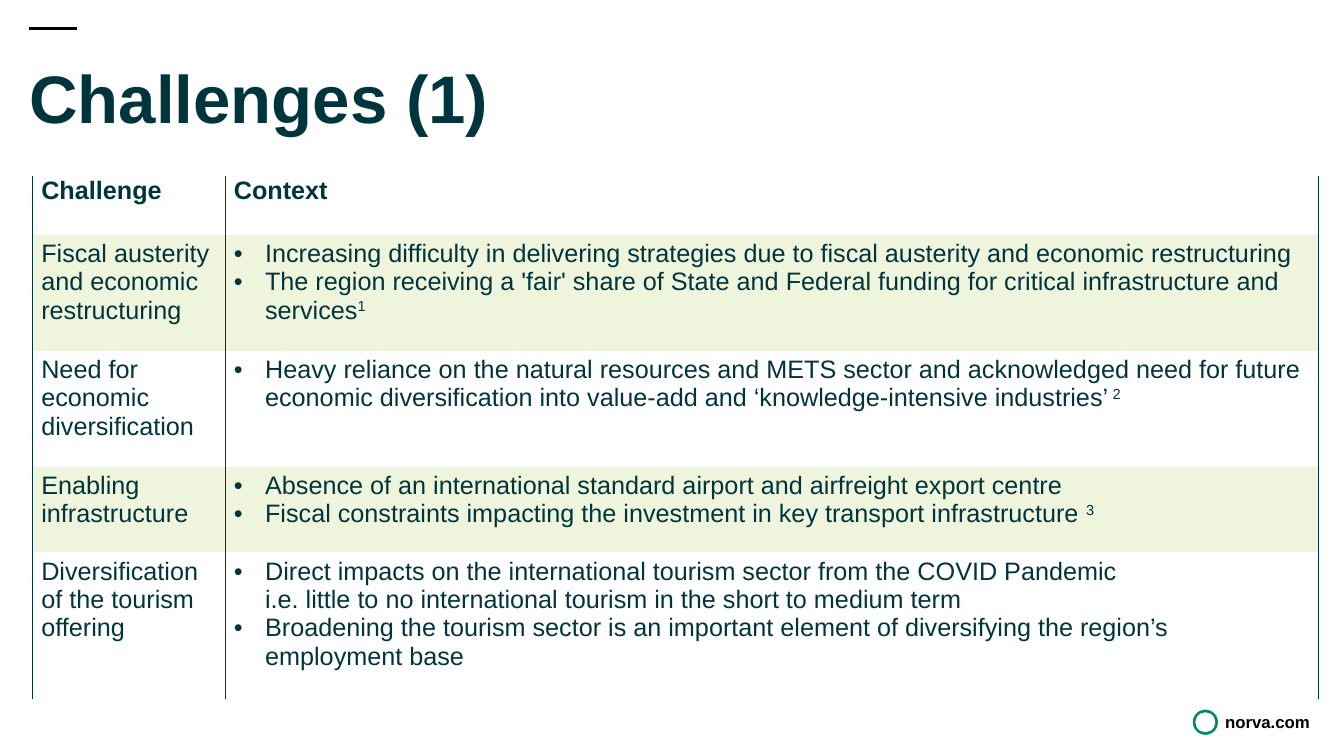
from lxml import etree
from pptx import Presentation
from pptx.dml.color import RGBColor
from pptx.enum.shapes import MSO_CONNECTOR, MSO_SHAPE
from pptx.enum.text import MSO_ANCHOR
from pptx.oxml.ns import qn
from pptx.util import Inches, Pt

STRAIGHT = MSO_CONNECTOR.STRAIGHT
RING = MSO_SHAPE.DONUT
TOP, MIDDLE = MSO_ANCHOR.TOP, MSO_ANCHOR.MIDDLE
TEAL = RGBColor(0x00, 0x35, 0x3E)
GREEN = RGBColor(0x00, 0x89, 0x66)
BAND = RGBColor(0xEF, 0xF5, 0xDD)
BLACK = RGBColor(0, 0, 0)
FONT = "Arial"

# Content: "^" starts a superscript reference, "\v" breaks a line
TITLE = "Challenges (1)"
FOOTER = "norva.com"
HEADINGS = ("Challenge", "Context")
CHALLENGES = [
    ("Fiscal austerity and economic restructuring", [
        "Increasing difficulty in delivering strategies due to fiscal austerity and economic restructuring",
        "The region receiving a 'fair' share of State and Federal funding for critical infrastructure and services^1",
    ]),
    ("Need for economic diversification", [
        "Heavy reliance on the natural resources and METS sector and acknowledged need for future economic "
        "diversification into value-add and ‘knowledge-intensive industries’^ 2",
    ]),
    ("Enabling infrastructure", [
        "Absence of an international standard airport and airfreight export centre",
        "Fiscal constraints impacting the investment in key transport infrastructure ^3",
    ]),
    ("Diversification of the tourism offering", [
        "Direct impacts on the international tourism sector from the COVID Pandemic\v"
        "i.e. little to no international tourism in the short to medium term",
        "Broadening the tourism sector is an important element of diversifying the region’s employment base",
    ]),
]

# Layout in inches
WIDTH, HEIGHT = 13.33, 7.5
MARGIN = 0.29
TABLE_LEFT, TABLE_TOP = 0.32, 1.75
COLUMNS = (1.91, 10.85)
ROWS = (0.58, 1.11, 1.11, 0.83, 1.44)
INDENT = 0.31


def write(frame, lines, size=18, bold=False, color=TEAL, bullets=False):
    """Fill a text frame with one paragraph per line."""
    frame.word_wrap = True
    for index, line in enumerate(lines):
        para = frame.paragraphs[0] if index == 0 else frame.add_paragraph()
        body, _, reference = line.partition("^")
        para.text = body
        if reference:
            span = para.add_run()
            span.text = reference
            span._r.get_or_add_rPr().set("baseline", "30000")
        for span in para.runs:
            span.font.name, span.font.size = FONT, Pt(size)
            span.font.bold, span.font.color.rgb = bold, color
        if bullets:
            props = para._p.get_or_add_pPr()
            props.set("marL", str(Inches(INDENT)))
            props.set("indent", str(-Inches(INDENT)))
            etree.SubElement(props, qn("a:buFont")).set("typeface", FONT)
            etree.SubElement(props, qn("a:buChar")).set("char", "•")


def add_text(page, left, top, width, height, text, anchor=TOP, **style):
    frame = page.shapes.add_textbox(*map(Inches, (left, top, width, height))).text_frame
    frame.margin_left = frame.margin_right = frame.margin_top = frame.margin_bottom = 0
    frame.vertical_anchor = anchor
    write(frame, [text], **style)


def style_cell(cell, top_margin, band):
    """Rule the sides only, then set margins and fill."""
    props = cell._tc.get_or_add_tcPr()
    for side in "LRTB":
        edge = etree.SubElement(props, qn("a:ln" + side))
        if side in "LR":
            edge.set("w", str(Pt(0.5)))
            paint = etree.SubElement(edge, qn("a:solidFill"))
            etree.SubElement(paint, qn("a:srgbClr")).set("val", str(TEAL))
        else:
            etree.SubElement(edge, qn("a:noFill"))
    cell.margin_left = cell.margin_right = Inches(0.09)
    cell.margin_top, cell.margin_bottom = Inches(top_margin), Inches(0.2)
    if band:
        cell.fill.solid()
        cell.fill.fore_color.rgb = BAND
    else:
        cell.fill.background()


def add_challenges(page):
    frame = page.shapes.add_table(len(ROWS), len(COLUMNS), Inches(TABLE_LEFT), Inches(TABLE_TOP),
                                  Inches(sum(COLUMNS)), Inches(sum(ROWS)))
    table = frame.table
    table.first_row = table.horz_banding = False
    for column, width in zip(table.columns, COLUMNS):
        column.width = Inches(width)
    for row, height in zip(table.rows, ROWS):
        row.height = Inches(height)
    records = [(HEADINGS[0], [HEADINGS[1]])] + CHALLENGES
    for index, (challenge, context) in enumerate(records):
        header = index == 0
        for column, lines in enumerate(([challenge], context)):
            cell = table.cell(index, column)
            style_cell(cell, 0 if header else 0.05, band=index % 2 == 1)
            write(cell.text_frame, lines, bold=header, bullets=column == 1 and not header)


def main():
    deck = Presentation()
    deck.slide_width, deck.slide_height = Inches(WIDTH), Inches(HEIGHT)
    page = deck.slides.add_slide(deck.slide_layouts[6])

    # Accent rule and title
    rule = page.shapes.add_connector(STRAIGHT, *map(Inches, (MARGIN, 0.28, 0.76, 0.28)))
    rule.line.color.rgb, rule.line.width = BLACK, Pt(2)
    etree.SubElement(rule._element.spPr, qn("a:effectLst"))
    add_text(page, MARGIN, 0.56, 12.75, 0.71, TITLE, size=48, bold=True)

    add_challenges(page)

    # Footer mark and web address
    mark = page.shapes.add_shape(RING, *map(Inches, (11.83, 7.04, 0.25, 0.25)))
    mark.adjustments[0] = 0.1
    mark.shadow.inherit = False
    mark.fill.solid()
    mark.fill.fore_color.rgb = GREEN
    mark.line.fill.background()
    add_text(page, 12.15, 7.04, 0.95, 0.25, FOOTER, anchor=MIDDLE, size=12, bold=True, color=BLACK)

    deck.save("out.pptx")


if __name__ == "__main__":
    main()
